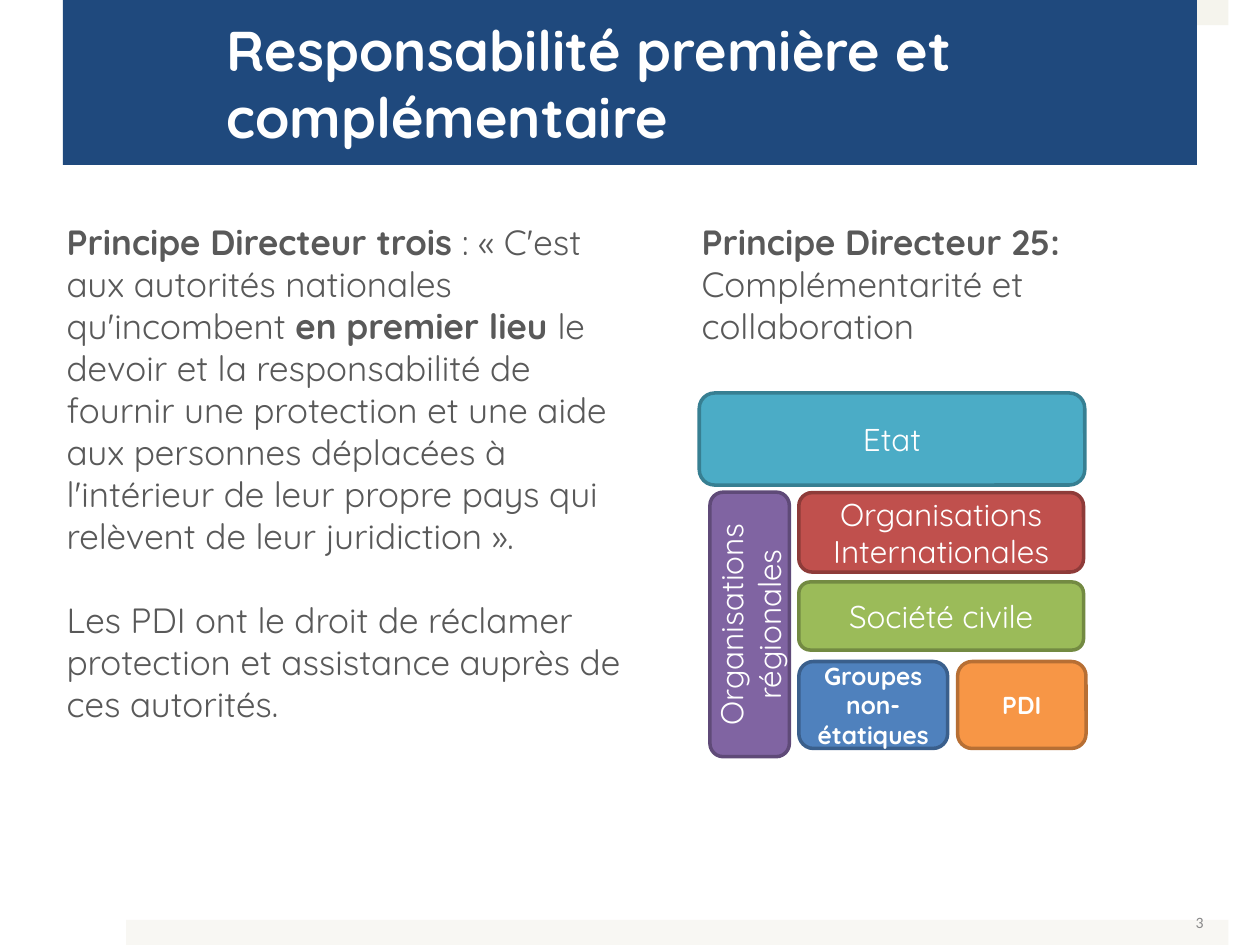
from pptx import Presentation
from pptx.dml.color import RGBColor
from pptx.enum import shapes, text
from pptx.util import Pt

WHITE = RGBColor(0xFF, 0xFF, 0xFF)
NAVY = RGBColor(0x1F, 0x49, 0x7D)
BODY_GRAY = RGBColor(0x59, 0x59, 0x59)
NUMBER_GRAY = RGBColor(0x89, 0x89, 0x89)
TOP_STRIP = RGBColor(0xF5, 0xF4, 0xED)
BOTTOM_STRIP = RGBColor(0xF8, 0xF7, 0xF3)
TEAL, TEAL_EDGE = RGBColor(0x4B, 0xAC, 0xC6), RGBColor(0x37, 0x7F, 0x92)
RED, RED_EDGE = RGBColor(0xC0, 0x50, 0x4D), RGBColor(0x8E, 0x3B, 0x39)
GREEN, GREEN_EDGE = RGBColor(0x9B, 0xBB, 0x59), RGBColor(0x73, 0x8A, 0x42)
PURPLE, PURPLE_EDGE = RGBColor(0x80, 0x64, 0xA2), RGBColor(0x5F, 0x4A, 0x78)
ORANGE, ORANGE_EDGE = RGBColor(0xF7, 0x96, 0x46), RGBColor(0xB7, 0x6F, 0x34)
BLUE, BLUE_EDGE = RGBColor(0x4F, 0x81, 0xBD), RGBColor(0x3A, 0x5F, 0x8C)

FONT = "Quicksand"
BODY_SIZE = 20
BODY_TOP, BODY_HEIGHT = 122.4, 360
STACK_LEFT, STACK_WIDTH = 456.5, 162.7
BOTTOM_ROW_TOP, BOTTOM_ROW_HEIGHT = 378, 49.7

# Each paragraph is a space before and a list of (text, bold) runs.
PRINCIPLE_3 = [
    (0, [("Principe Directeur trois ", True),
         (": « C'est aux autorités nationales qu'incombent ", False),
         ("en premier lieu ", True),
         ("le devoir et la responsabilité de", False)]),
    (0, [("fournir une protection et une aide aux personnes déplacées à "
          "l'intérieur de leur propre pays qui", False)]),
    (0, [("relèvent de leur juridiction\u00a0».", False)]),
    (24, [("Les PDI ont le droit de réclamer protection et assistance "
           "auprès de ces autorités.", False)]),
]
PRINCIPLE_25 = [
    (0, [("Principe Directeur 25: ", True),
         ("Complémentarité et collaboration", False)]),
]

# Label, box, fill, edge, size, bold, rotation
ACTORS = [
    ("Etat", (399.6, 224.6, 220.3, 52.6), TEAL, TEAL_EDGE, 18, False, 0),
    ("Organisations Internationales", (STACK_LEFT, 281.5, STACK_WIDTH, 45.4),
     RED, RED_EDGE, 18, False, 0),
    ("Société civile", (STACK_LEFT, 332.6, STACK_WIDTH, 38.9),
     GREEN, GREEN_EDGE, 18, False, 0),
    ("Organisations régionales", (352.8, 334.1, 151.2, 45.4),
     PURPLE, PURPLE_EDGE, 18, False, 270),
    ("PDI", (547.2, BOTTOM_ROW_TOP, 73.4, BOTTOM_ROW_HEIGHT),
     ORANGE, ORANGE_EDGE, 14, True, 0),
    ("Groupes non-étatiques", (STACK_LEFT, BOTTOM_ROW_TOP, 85, BOTTOM_ROW_HEIGHT),
     BLUE, BLUE_EDGE, 14, True, 0),
]


def format_font(font, size, color, bold=False, name=FONT):
    font.name = name
    font.size = Pt(size)
    font.bold = bold
    font.color.rgb = color


def add_filled_shape(slide, kind, box, fill):
    shape = slide.shapes.add_shape(kind, *map(Pt, box))
    shape.shadow.inherit = False
    shape.fill.solid()
    shape.fill.fore_color.rgb = fill
    shape.line.fill.background()
    return shape


def add_rectangle(slide, box, fill):
    return add_filled_shape(slide, shapes.MSO_SHAPE.RECTANGLE, box, fill)


def set_label(shape, label, alignment, size, color, **font_options):
    """Fill a shape with one vertically centred paragraph."""
    frame = shape.text_frame
    frame.word_wrap = True
    frame.vertical_anchor = text.MSO_ANCHOR.MIDDLE
    frame.text = label
    paragraph = frame.paragraphs[0]
    paragraph.alignment = alignment
    format_font(paragraph.runs[0].font, size, color, **font_options)


def add_title(slide):
    banner = add_rectangle(slide, (36, 0, 648, 94.3), NAVY)
    set_label(banner, "Responsabilité première et complémentaire",
              text.PP_ALIGN.LEFT, 32, WHITE, bold=True)
    banner.text_frame.margin_left = Pt(93.6)
    banner.text_frame.margin_right = Pt(21.6)


def add_slide_number(slide):
    number = slide.shapes.add_textbox(Pt(524.9), Pt(512.6), Pt(167.8), Pt(28.8))
    set_label(number, "3", text.PP_ALIGN.RIGHT, 9, NUMBER_GRAY, name="Calibri")
    number.text_frame.margin_left = number.text_frame.margin_right = Pt(5)


def add_body(slide, left, width, paragraphs):
    body = slide.shapes.add_textbox(Pt(left), Pt(BODY_TOP), Pt(width), Pt(BODY_HEIGHT))
    frame = body.text_frame
    frame.word_wrap = True
    for index, (space_before, runs) in enumerate(paragraphs):
        paragraph = frame.add_paragraph() if index else frame.paragraphs[0]
        paragraph.space_before = Pt(space_before)
        for content, bold in runs:
            run = paragraph.add_run()
            run.text = content
            format_font(run.font, BODY_SIZE, BODY_GRAY, bold)


def add_actor(slide, label, box, fill, edge, size, bold, rotation):
    block = add_filled_shape(slide, shapes.MSO_SHAPE.ROUNDED_RECTANGLE, box, fill)
    block.line.color.rgb = edge
    block.line.width = Pt(2)
    block.rotation = rotation
    set_label(block, label, text.PP_ALIGN.CENTER, size, WHITE, bold=bold)


def main():
    presentation = Presentation()
    presentation.slide_width, presentation.slide_height = Pt(720), Pt(540)
    slide = presentation.slides.add_slide(presentation.slide_layouts[6])
    add_rectangle(slide, (72, 0, 630, 14.4), TOP_STRIP)
    add_rectangle(slide, (72, 525.6, 630, 14.4), BOTTOM_STRIP)
    add_slide_number(slide)
    add_title(slide)
    add_body(slide, 31, 340, PRINCIPLE_3)
    add_body(slide, 393.8, 301.7, PRINCIPLE_25)
    for actor in ACTORS:
        add_actor(slide, *actor)
    presentation.save("out.pptx")


if __name__ == "__main__":
    main()
